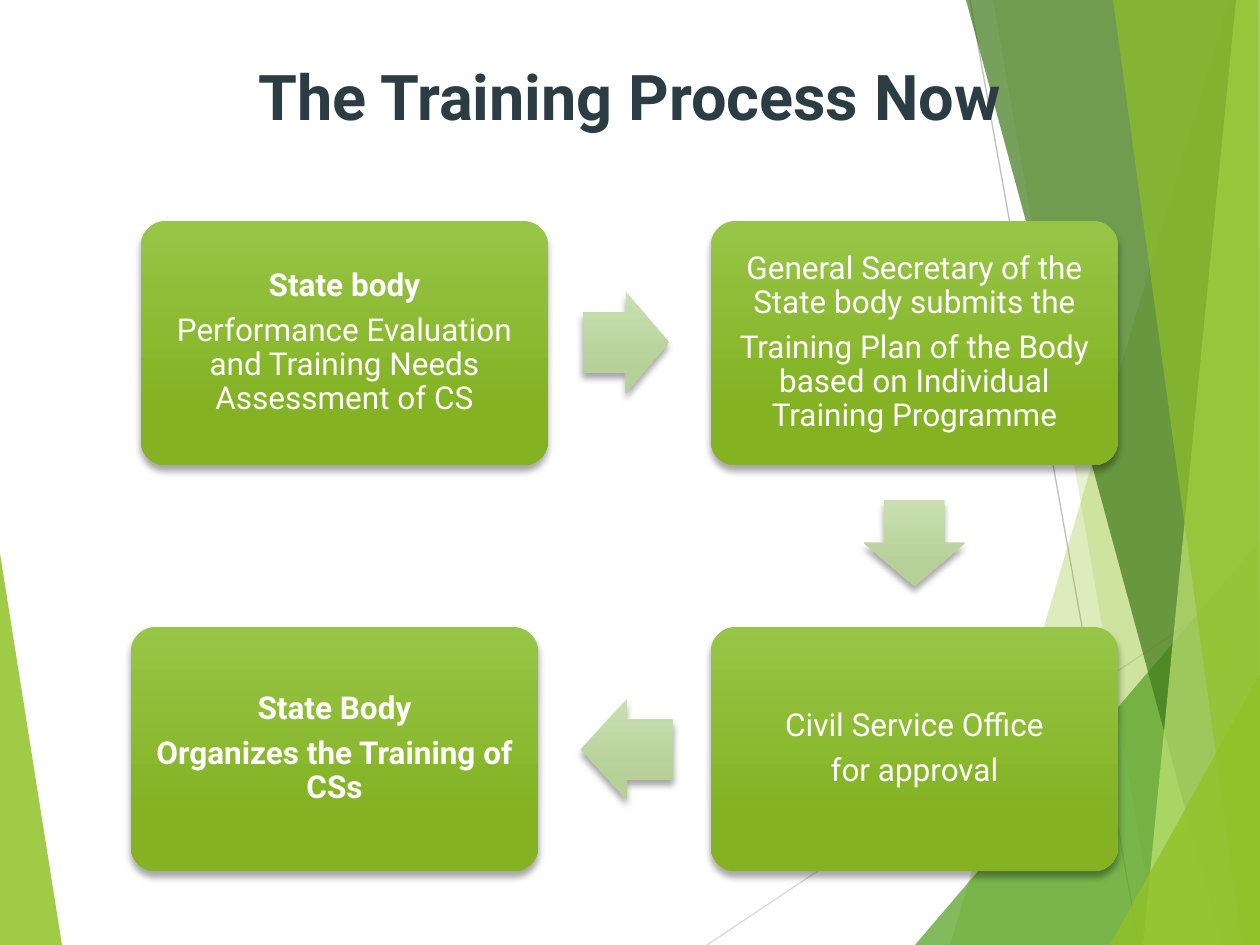
"""Build the slide showing the four steps of the training process."""
from lxml.etree import SubElement
from pptx import Presentation
from pptx.dml.color import RGBColor
from pptx.enum.shapes import MSO_CONNECTOR as Line, MSO_SHAPE as Kind
from pptx.enum.text import MSO_ANCHOR as Anchor, PP_ALIGN as Align
from pptx.oxml.ns import qn
from pptx.util import Pt

SCALE = 914400 / 126
WIDE, HIGH = 1260, 945
FONT = "Roboto"
HEX = {
    "lime": "90C226", "green": "54A021", "dark": "3F7819", "pale": "C0E474",
    "ink": "2C3C43", "white": "FFFFFF", "black": "000000",
    "grey": "BFBFBF", "mist": "D9D9D9",
    "boxtop": "97C547", "boxlow": "84B223",
    "arrtop": "C9DFB1", "arrlow": "B6D098",
}
TITLE = "The Training Process Now"
LEFT_BAND = ("lime", 85, [(0, 553), (62, HIGH), (0, HIGH)])
LINES = [
    ("mist", (707, HIGH), (WIDE, 576)),
    ("grey", (970, 0), (1139, HIGH)),
]
BANDS = [
    ("lime", 30, [(1229, 0), (950, HIGH), (WIDE, HIGH), (WIDE, 0)]),
    ("lime", 20, [(993, 0), (1158, HIGH), (WIDE, HIGH), (WIDE, 0)]),
    ("green", 72, [(915, HIGH), (WIDE, 541), (WIDE, HIGH)]),
    ("dark", 70, [(966, 0), (1222, HIGH), (WIDE, HIGH), (WIDE, 0)]),
    ("pale", 70, [(1236, 0), (1143, HIGH), (WIDE, HIGH), (WIDE, 0)]),
    ("lime", 65, [(1113, 0), (1242, HIGH), (WIDE, HIGH), (1258, 0)]),
    ("lime", 80, [(1110, HIGH), (WIDE, 674), (WIDE, HIGH)]),
]
BOX = (407, 244)
STEPS = [
    (141, 221, [("State body", True),
                ("Performance Evaluation and Training Needs Assessment of CS", False)]),
    (711, 221, [("General Secretary of the State body submits the", False),
                ("Training Plan of the Body based on Individual Training Programme", False)]),
    (711, 627, [("Civil Service Office", False), ("for approval", False)]),
    (131, 627, [("State Body", True), ("Organizes the Training of CSs", True)]),
]
ARROWS = [
    (Kind.RIGHT_ARROW, 583, 292, 86, 101),
    (Kind.DOWN_ARROW, 864, 500, 101, 86),
    (Kind.LEFT_ARROW, 581, 699, 92, 101),
]


def px(*nums):
    return [round(n * SCALE) for n in nums]


def tint(name):
    return RGBColor.from_string(HEX[name])


def add_band(slide, name, alpha, points):
    pen = slide.shapes.build_freeform(*points[0], scale=SCALE)
    pen.add_line_segments(points[1:], close=True)
    band = pen.convert_to_shape()
    band.shadow.inherit = False
    band.line.fill.background()
    band.fill.solid()
    band.fill.fore_color.rgb = tint(name)
    node = band.element.spPr.find(".//" + qn("a:srgbClr"))
    SubElement(node, qn("a:alpha"), val=str(alpha * 1000))


def add_line(slide, name, start, end):
    line = slide.shapes.add_connector(Line.STRAIGHT, *px(*start, *end))
    line.line.color.rgb = tint(name)
    line.line.width = Pt(0.75)
    SubElement(line.element.spPr, qn("a:effectLst"))


def add_card(slide, kind, area, names, *adj):
    card = slide.shapes.add_shape(kind, *px(*area))
    for i, val in enumerate(adj):
        card.adjustments[i] = val
    card.line.fill.background()
    card.fill.gradient()
    card.fill.gradient_angle = 270
    for stop, name, pos in zip(card.fill.gradient_stops, names, (0, 0.78)):
        stop.color.rgb = tint(name)
        stop.position = pos
    card.shadow.inherit = False
    glow = SubElement(card.element.spPr.find(qn("a:effectLst")), qn("a:outerShdw"),
                      blurRad=str(Pt(4)), dist=str(Pt(3)), dir="5400000",
                      rotWithShape="0")
    node = SubElement(glow, qn("a:srgbClr"), val=HEX["black"])
    SubElement(node, qn("a:alpha"), val="35000")
    return card


def style(para, text, size, name, bold):
    para.text = text
    para.alignment = Align.CENTER
    font = para.font
    font.name, font.size, font.bold = FONT, Pt(size), bold
    font.color.rgb = tint(name)


def add_step(slide, left, top, rows):
    card = add_card(slide, Kind.ROUNDED_RECTANGLE, (left, top, *BOX),
                    ("boxtop", "boxlow"), 0.1)
    frame = card.text_frame
    frame.word_wrap = True
    frame.vertical_anchor = Anchor.MIDDLE
    pad = px(16)[0]
    frame.margin_left = frame.margin_right = pad
    frame.margin_top = frame.margin_bottom = pad
    for i, (text, bold) in enumerate(rows):
        para = frame.add_paragraph() if i else frame.paragraphs[0]
        style(para, text, 18, "white", bold)
        para.line_spacing = 0.9
        para.space_after = Pt(6.3)


def main():
    deck = Presentation()
    deck.slide_width, deck.slide_height = px(WIDE, HIGH)
    slide = deck.slides.add_slide(deck.slide_layouts[6])
    add_band(slide, *LEFT_BAND)
    for line in LINES:
        add_line(slide, *line)
    for band in BANDS:
        add_band(slide, *band)
    frame = slide.shapes.add_textbox(*px(0, 42, 1259, 97)).text_frame
    frame.word_wrap = True
    frame.vertical_anchor = Anchor.BOTTOM
    style(frame.paragraphs[0], TITLE, 36, "ink", True)
    for step in STEPS:
        add_step(slide, *step)
    for kind, *area in ARROWS:
        add_card(slide, kind, area, ("arrtop", "arrlow"), 0.6, 0.5)
    deck.save("out.pptx")


if __name__ == "__main__":
    main()
